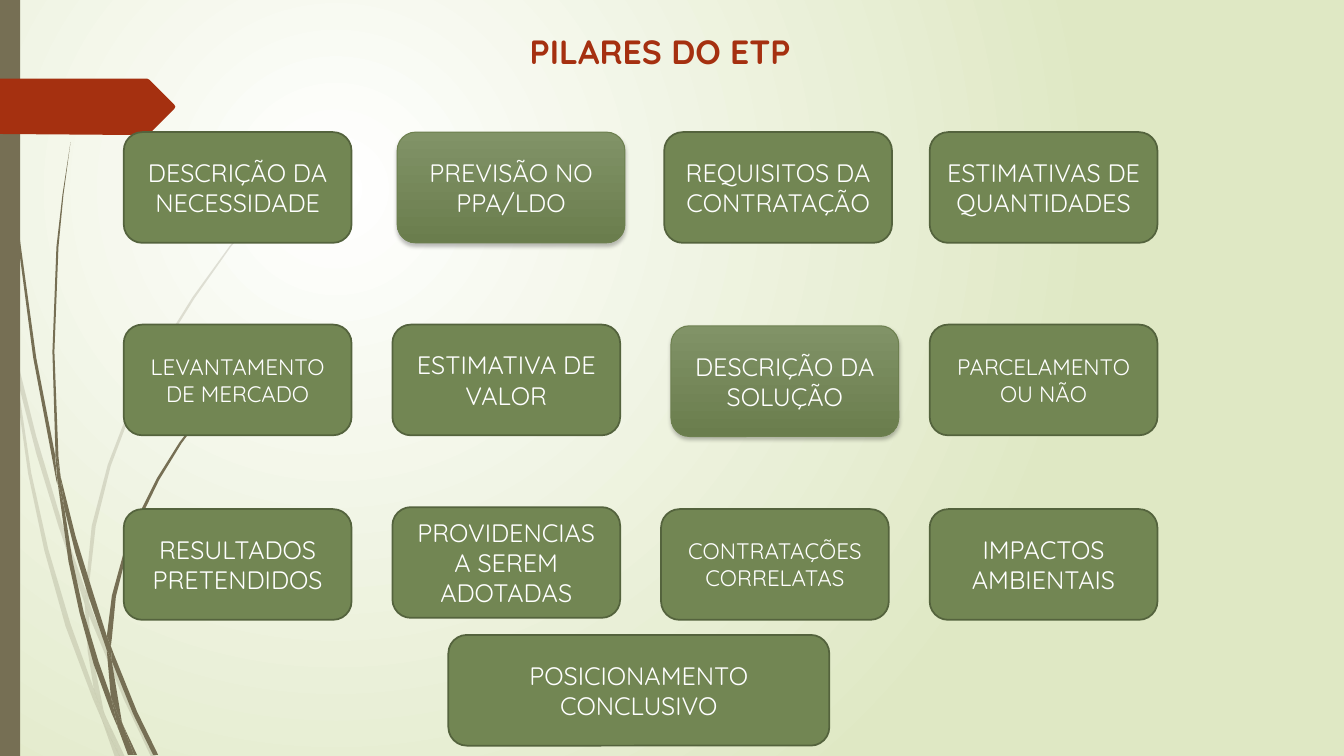
import pptx
import pptx.util
import pptx.dml.color
import pptx.enum.shapes
import pptx.enum.text
import pptx.oxml
import pptx.oxml.ns
from lxml import etree
from pptx.util import Cm, Pt

FONT = "Quicksand"
COLORS = {
    "white": "FFFFFF", "meadow": "DFE8C4", "bark": "766F54", "rust": "A53010",
    "green": "728653", "edge": "54633D", "light": "819367", "deep": "6A7D4D",
    "raised_edge": "6D804F", "shadow": "000000",
}

# Pillar grid in centimetres
COLUMNS = [3.12 + 6.77 * i for i in range(4)]
ROWS = [3.33, 8.18, 12.83]
BOX_W, BOX_H = 5.74, 2.79

# Text, size, raised look, offset from the grid
PILLARS = [
    [("DESCRIÇÃO DA NECESSIDADE", 18, False, 0, 0),
     ("PREVISÃO NO PPA/LDO", 18, True, 0.12, 0),
     ("REQUISITOS DA CONTRATAÇÃO", 18, False, 0.08, 0),
     ("ESTIMATIVAS DE QUANTIDADES", 18, False, 0, 0)],
    [("LEVANTAMENTO DE MERCADO", 16, False, 0, 0),
     ("ESTIMATIVA DE VALOR", 18, False, 0, 0),
     ("DESCRIÇÃO DA SOLUÇÃO", 18, True, 0.25, 0.03),
     ("PARCELAMENTO OU NÃO", 16, False, 0, 0)],
    [("RESULTADOS PRETENDIDOS", 18, False, 0, 0),
     ("PROVIDENCIAS A SEREM ADOTADAS", 18, False, 0, -0.05),
     ("CONTRATAÇÕES CORRELATAS", 16, False, 0, 0),
     ("IMPACTOS AMBIENTAIS", 18, False, 0, 0)],
]

# Outlines in hundredths of an inch
PALE_GRASS = [
    [(11, 350), (9, 322), (0, 282), (0, 299), (10, 344)],
    [(58, 522), (84, 599), (85, 586), (62, 520), (36, 433), (14, 345), (17, 376), (36, 450)],
    [(92, 607), (88, 596), (88, 610), (123, 694), (150, 751), (155, 751), (127, 692)],
    [(119, 751), (124, 751), (105, 711)],
    [(93, 683), (70, 619), (48, 545), (31, 469), (17, 376), (11, 350), (28, 470),
     (44, 546), (65, 621), (92, 693), (101, 714), (99, 707)],
    [(84, 599), (87, 646), (93, 683), (96, 692), (105, 711), (103, 706), (91, 646),
     (88, 610), (88, 608)],
    [(88, 584), (95, 522), (110, 462), (132, 404), (160, 349), (193, 296), (229, 245),
     (268, 198), (290, 175), (312, 154), (312, 153), (289, 175), (268, 197), (228, 244),
     (191, 295), (158, 348), (129, 404), (107, 461), (91, 522), (85, 584), (85, 586),
     (88, 596)],
    [(101, 714), (114, 751), (119, 751)],
    [(88, 608), (88, 610), (88, 596), (85, 586), (84, 599)],
    [(96, 692), (93, 683), (99, 707), (101, 714), (119, 751), (105, 711)],
]
DARK_GRASS = [
    [(7, 110), (17, 233), (33, 355), (56, 477), (57, 481), (55, 457), (55, 453),
     (36, 355), (19, 232), (8, 109), (5, 48), (4, 0), (3, 0), (4, 48)],
    [(88, 592), (106, 645), (106, 631), (93, 590), (75, 532), (60, 472), (64, 505), (75, 549)],
    [(113, 649), (110, 641), (111, 656), (132, 708), (152, 749), (157, 749), (136, 706)],
    [(110, 691), (98, 657), (83, 607), (72, 556), (64, 505), (57, 477), (68, 557),
     (79, 608), (93, 659), (111, 708), (117, 722), (116, 717)],
    [(60, 472), (58, 453), (54, 349), (58, 245), (63, 193), (70, 141), (62, 193),
     (56, 245), (52, 349), (55, 449)],
    [(133, 749), (136, 749), (122, 719)],
    [(57, 477), (64, 505), (60, 472), (55, 449), (55, 453)],
    [(111, 633), (115, 592), (125, 552), (140, 513), (158, 476), (180, 440), (205, 406),
     (231, 374), (245, 359), (261, 344), (260, 344), (245, 358), (231, 373), (204, 405),
     (178, 439), (156, 474), (137, 512), (122, 551), (111, 591), (106, 631), (110, 641)],
    [(117, 722), (127, 749), (131, 749)],
    [(106, 645), (110, 691), (116, 706), (122, 719), (121, 716), (111, 656), (109, 651)],
    [(106, 645), (109, 651), (111, 656), (110, 641), (106, 631)],
    [(116, 706), (110, 691), (116, 717), (117, 722), (130, 749), (133, 749), (122, 719)],
]
ARROW_TAG = [(173, 108), (148, 133), (146, 134), (136, 134), (0, 133), (0, 78),
             (146, 78), (148, 79), (173, 104), (174, 106)]


def rgb(name):
    return pptx.dml.color.RGBColor.from_string(COLORS[name])


def fill_solid(shape, color):
    shape.shadow.inherit = False
    shape.fill.solid()
    shape.fill.fore_color.rgb = rgb(color)


def fill_gradient(fill, start, end):
    fill.gradient()
    for stop, color in zip(fill.gradient_stops, (start, end)):
        stop.color.rgb = rgb(color)
        stop.position = 0 if color == start else 1


def add_run(paragraph, text, size, color, bold=False):
    paragraph.alignment = pptx.enum.text.PP_ALIGN.CENTER
    run = paragraph.add_run()
    run.text = text
    run.font.name = FONT
    run.font.size = Pt(size)
    run.font.bold = bold
    run.font.color.rgb = rgb(color)


def paint_background(slide):
    fill_gradient(slide.background.fill, "white", "meadow")
    ns = pptx.oxml.ns.qn
    gradient = next(slide.background._cSld.iter(ns("a:gradFill")))
    linear = gradient.find(ns("a:lin"))
    if linear is not None:
        gradient.remove(linear)
    glow = etree.Element(ns("a:path"), {"path": "circle"})
    etree.SubElement(glow, ns("a:fillToRect"), l="50000", t="50000", r="100000", b="100000")
    gradient.find(ns("a:gsLst")).addnext(glow)


def add_outline(slide, points, color, alpha=None):
    builder = slide.shapes.build_freeform(*points[0], scale=Cm(2.54) / 100)
    builder.add_line_segments(points[1:], close=True)
    outline = builder.convert_to_shape()
    fill_solid(outline, color)
    outline.line.fill.background()
    if alpha is not None:
        ns = pptx.oxml.ns.qn
        tint = outline._element.spPr.find(ns("a:solidFill")).find(ns("a:srgbClr"))
        etree.SubElement(tint, ns("a:alpha"), val=str(alpha * 1000))


def raise_box(box):
    fill_gradient(box.fill, "light", "deep")
    box.fill.gradient_angle = 270
    box.line.color.rgb = rgb("raised_edge")
    box.line.width = Pt(0.75)
    box.shadow.inherit = False
    ns = pptx.oxml.ns.qn
    effects = box._element.spPr.find(ns("a:effectLst"))
    cast = etree.SubElement(effects, ns("a:outerShdw"), blurRad=str(Pt(3)), dist=str(Pt(2)),
                            dir="5400000", algn="ctr", rotWithShape="0")
    tint = etree.SubElement(cast, ns("a:srgbClr"), val=COLORS["shadow"])
    etree.SubElement(tint, ns("a:alpha"), val="25000")


def add_pillar(slide, left, top, text, size=18, raised=False, width=BOX_W):
    box = slide.shapes.add_shape(pptx.enum.shapes.MSO_SHAPE.ROUNDED_RECTANGLE,
                                 Cm(left), Cm(top), Cm(width), Cm(BOX_H))
    if raised:
        raise_box(box)
    else:
        fill_solid(box, "green")
        box.line.color.rgb = rgb("edge")
        box.line.width = Pt(1.25)
    box.text_frame.word_wrap = True
    box.text_frame.vertical_anchor = pptx.enum.text.MSO_ANCHOR.MIDDLE
    add_run(box.text_frame.paragraphs[0], text, size, "white")


def add_title(slide):
    title = slide.shapes.title
    title.left, title.top, title.width, title.height = Cm(11.79), Cm(0.66), Cm(9.7), Cm(1.27)
    title.text_frame.word_wrap = True
    title.text_frame.auto_size = pptx.enum.text.MSO_AUTO_SIZE.SHAPE_TO_FIT_TEXT
    title.text_frame.vertical_anchor = pptx.enum.text.MSO_ANCHOR.TOP
    add_run(title.text_frame.paragraphs[0], "PILARES DO ETP", 24, "rust", bold=True)


def main():
    deck = pptx.Presentation()
    deck.slide_width, deck.slide_height = Cm(33.87), Cm(19.05)
    slide = deck.slides.add_slide(deck.slide_layouts[5])

    # Backdrop: glow, grass blades, side bar and arrow tag
    paint_background(slide)
    for blade in PALE_GRASS:
        add_outline(slide, blade, "bark", alpha=20)
    for blade in DARK_GRASS:
        add_outline(slide, blade, "bark")
    side_bar = slide.shapes.add_shape(pptx.enum.shapes.MSO_SHAPE.RECTANGLE,
                                      0, 0, Cm(0.51), deck.slide_height)
    fill_solid(side_bar, "bark")
    side_bar.line.fill.background()
    add_outline(slide, ARROW_TAG, "rust")

    # Pillars and the closing box
    for top, row in zip(ROWS, PILLARS):
        for left, (text, size, raised, dx, dy) in zip(COLUMNS, row):
            add_pillar(slide, left + dx, top + dy, text, size, raised)
    add_pillar(slide, 11.3, 16, "POSICIONAMENTO CONCLUSIVO", width=9.6)

    add_title(slide)
    deck.save("out.pptx")


if __name__ == "__main__":
    main()
